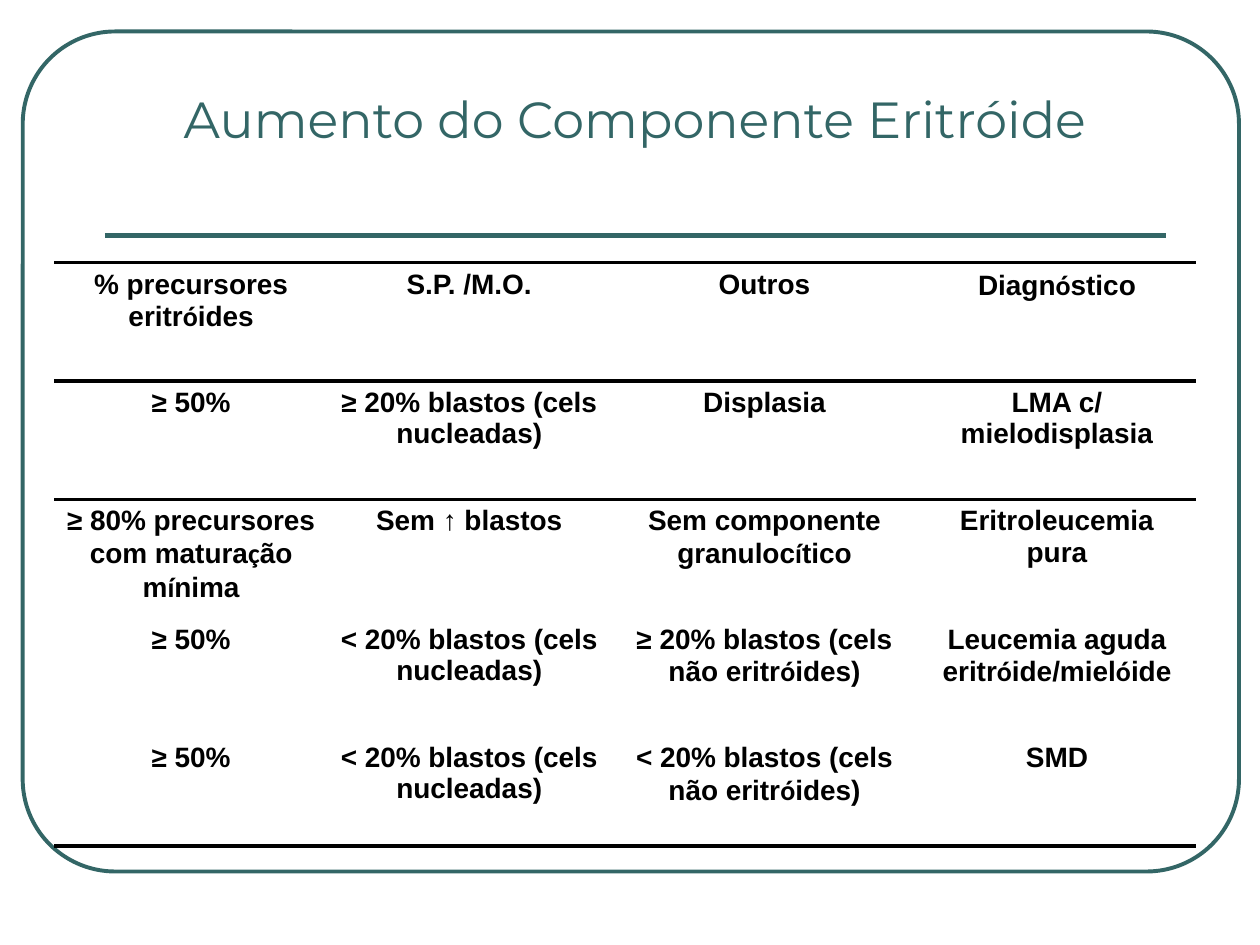
from dataclasses import dataclass
from itertools import groupby

from lxml import etree
from pptx import Presentation
from pptx.dml.color import RGBColor
from pptx.enum.shapes import MSO_CONNECTOR, MSO_SHAPE
from pptx.enum.text import MSO_ANCHOR, MSO_AUTO_SIZE, PP_ALIGN
from pptx.oxml.ns import qn
from pptx.util import Pt

CENTER = PP_ALIGN.CENTER
TOP, BOTTOM = MSO_ANCHOR.TOP, MSO_ANCHOR.BOTTOM
NO_FIT = MSO_AUTO_SIZE.NONE
STRAIGHT = MSO_CONNECTOR.STRAIGHT
ROUNDED = MSO_SHAPE.ROUNDED_RECTANGLE
TITLE_ONLY = 5
PLAIN_TABLE = "{2D5ABB26-0587-4C30-8999-92F81FD0307C}"
ACCENT_LETTERS = "óçí"


@dataclass(frozen=True)
class Theme:
    """Colours, fonts, type sizes and line widths of the slide."""
    accent: str = "336666"
    ink: str = "000000"
    title_font: str = "Montserrat"
    table_font: str = "Arial"
    letter_font: str = "Calibri"
    title_size: float = 29
    table_size: float = 16
    thin: float = 2.25
    thick: float = 3


THEME = Theme()
COLUMN_WIDTHS = (156.4, 161.5, 175.9, 158.4)
ROW_HEIGHTS = (67.7, 67.7, 67.7, 67.7, 62.6)
RULED_SIDES = {0: ("T", "B"), 1: ("T",), 4: ("B",)}
DIAGNOSES = (
    ("% precursores eritróides", "S.P. /M.O.", "Outros", "Diagnóstico"),
    ("≥ 50%", "≥ 20% blastos (cels nucleadas)", "Displasia",
     "LMA c/ mielodisplasia"),
    ("≥ 80% precursores com maturação mínima", "Sem ↑ blastos",
     "Sem componente granulocítico", "Eritroleucemia pura"),
    ("≥ 50%", "< 20% blastos (cels nucleadas)",
     "≥ 20% blastos (cels não eritróides)",
     "Leucemia aguda eritróide/mielóide"),
    ("≥ 50%", "< 20% blastos (cels nucleadas)",
     "< 20% blastos (cels não eritróides)", "SMD"),
)


def write_text(frame, text, *, size, color, font, letter_font=None, bold=False):
    """Write one centred paragraph, with accented letters in their own font."""
    para = frame.paragraphs[0]
    para.alignment = CENTER
    for accented, letters in groupby(text, lambda letter: letter in ACCENT_LETTERS):
        span = para.add_run()
        span.text = "".join(letters)
        span.font.name = letter_font if accented and letter_font else font
        span.font.size = Pt(size)
        span.font.bold = bold
        span.font.color.rgb = RGBColor.from_string(color)


def add_frame(page):
    """Draw the rounded outline around the page."""
    box = page.shapes.add_shape(ROUNDED, Pt(13), Pt(18), Pt(695), Pt(480))
    box.adjustments[0] = 0.11
    box.shadow.inherit = False
    box.fill.background()
    box.line.color.rgb = RGBColor.from_string(THEME.accent)
    box.line.width = Pt(THEME.thin)


def add_title_rule(page):
    """Draw the line under the title."""
    rule = page.shapes.add_connector(STRAIGHT, Pt(60), Pt(134.6), Pt(666), Pt(134.6))
    rule.line.color.rgb = RGBColor.from_string(THEME.accent)
    rule.line.width = Pt(THEME.thick)
    properties = rule._element.find(qn("p:spPr"))
    etree.SubElement(properties, qn("a:effectLst"))


def fill_title(page, text):
    """Place and write the title placeholder."""
    title = page.shapes.title
    title.left, title.top = Pt(60), Pt(43)
    title.width, title.height = Pt(606), Pt(45.5)
    frame = title.text_frame
    frame.auto_size = NO_FIT
    frame.vertical_anchor = BOTTOM
    write_text(frame, text, size=THEME.title_size, color=THEME.accent,
               font=THEME.title_font)


def rule_cell(cell, sides):
    """Give a cell black borders on the named sides."""
    properties = cell._tc.get_or_add_tcPr()
    for place, side in enumerate(sides):
        border = etree.Element(qn(f"a:ln{side}"), w=str(Pt(THEME.thin)))
        fill = etree.SubElement(border, qn("a:solidFill"))
        etree.SubElement(fill, qn("a:srgbClr"), val=THEME.ink)
        properties.insert(place, border)


def add_diagnosis_table(page):
    """Build the table of diagnoses with its horizontal rules."""
    holder = page.shapes.add_table(
        len(ROW_HEIGHTS), len(COLUMN_WIDTHS), Pt(31), Pt(150),
        Pt(sum(COLUMN_WIDTHS)), Pt(sum(ROW_HEIGHTS)))
    table = holder.table
    table.first_row = table.horz_banding = False
    table._tbl.tblPr.find(qn("a:tableStyleId")).text = PLAIN_TABLE
    for column, width in zip(table.columns, COLUMN_WIDTHS):
        column.width = Pt(width)
    for index, (row, texts) in enumerate(zip(table.rows, DIAGNOSES)):
        row.height = Pt(ROW_HEIGHTS[index])
        for cell, text in zip(row.cells, texts):
            cell.fill.background()
            cell.vertical_anchor = TOP
            write_text(cell.text_frame, text, size=THEME.table_size,
                       color=THEME.ink, font=THEME.table_font,
                       letter_font=THEME.letter_font, bold=True)
            rule_cell(cell, RULED_SIDES.get(index, ()))


def main():
    """Build the slide and save the deck."""
    deck = Presentation()
    deck.slide_width, deck.slide_height = Pt(720), Pt(540)
    page = deck.slides.add_slide(deck.slide_layouts[TITLE_ONLY])
    add_frame(page)
    add_title_rule(page)
    fill_title(page, "Aumento do Componente Eritróide")
    add_diagnosis_table(page)
    deck.save("out.pptx")


if __name__ == "__main__":
    main()
